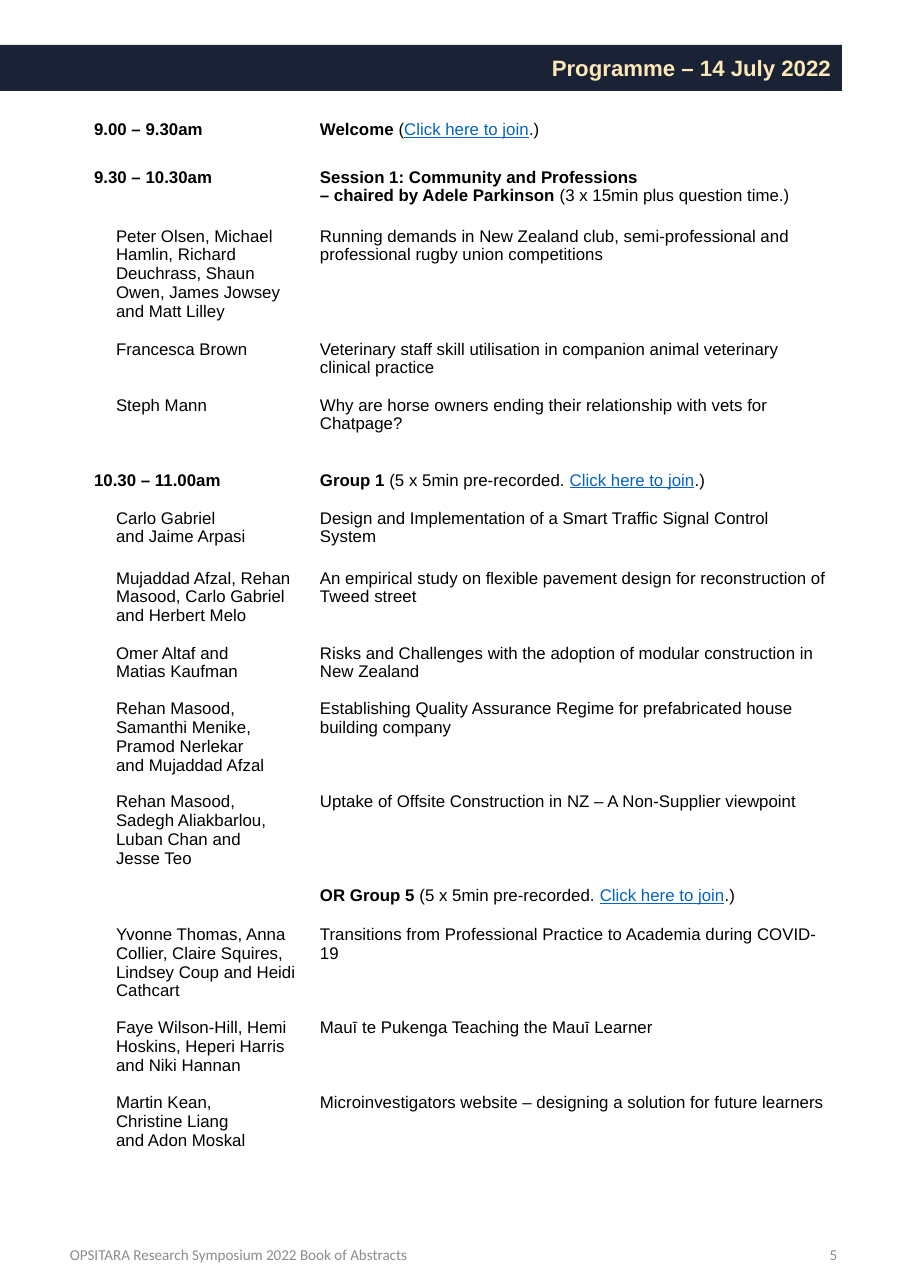
from lxml import etree
from pptx import Presentation
from pptx.dml.color import RGBColor
from pptx.enum.text import MSO_ANCHOR, PP_ALIGN
from pptx.oxml.ns import qn
from pptx.util import Pt

MIDDLE, RIGHT, LEFT = MSO_ANCHOR.MIDDLE, PP_ALIGN.RIGHT, PP_ALIGN.LEFT
PX = 8298
PAGE = (911, 1288)
PAD = 9
BODY = {"name": "Arial", "size": 11, "color": "000000"}
BOLD = {**BODY, "bold": True}
LINK = {**BODY, "color": "0563C1", "underline": True}
HEAD = {"name": "Arial", "size": 14.5, "color": "FEE8B6", "bold": True}
FOOT = {"name": "Calibri", "size": 9.9, "color": "8C8C8C"}

TITLE = "Programme – 14 July 2022"
FEET = [
    ("OPSITARA Research Symposium 2022 Book of Abstracts", 59, 380, LEFT),
    ("5", 643, 205, RIGHT),
]
JOIN = [("Click here to join", LINK), (".)", BODY)]
GROUP = [("(5 x 5min pre-recorded. ", BODY)] + JOIN
WELCOME = [[("Welcome ", BOLD), ("(", BODY)] + JOIN]
CHAIR = [
    [("Session 1: Community and Professions", BOLD)],
    [("– chaired by Adele Parkinson ", BOLD), ("(3 x 15min plus question time.)", BODY)],
]
ROWS = [
    (48, "9.00 – 9.30am", WELCOME),
    (59, "9.30 – 10.30am", CHAIR),
    (113, "Peter Olsen, Michael Hamlin, Richard Deuchrass, Shaun Owen, James Jowsey and Matt Lilley",
     "Running demands in New Zealand club, semi-professional and professional rugby union competitions"),
    (56, "Francesca Brown",
     "Veterinary staff skill utilisation in companion animal veterinary clinical practice"),
    (75, "Steph Mann",
     "Why are horse owners ending their relationship with vets for Chatpage?"),
    (38, "10.30 – 11.00am", [[("Group 1 ", BOLD)] + GROUP]),
    (60, "Carlo Gabriel\nand Jaime Arpasi",
     "Design and Implementation of a Smart Traffic Signal Control System"),
    (75, "Mujaddad Afzal, Rehan Masood, Carlo Gabriel and Herbert Melo",
     "An empirical study on flexible pavement design for reconstruction of Tweed street"),
    (56, "Omer Altaf and\nMatias Kaufman",
     "Risks and Challenges with the adoption of modular construction in New Zealand"),
    (93, "Rehan Masood, Samanthi Menike, Pramod Nerlekar\nand Mujaddad Afzal",
     "Establishing Quality Assurance Regime for prefabricated house building company"),
    (94, "Rehan Masood, Sadegh Aliakbarlou, Luban Chan and\nJesse Teo",
     "Uptake of Offsite Construction in NZ – A Non-Supplier viewpoint"),
    (38, "", [[("OR Group 5 ", BOLD)] + GROUP]),
    (93, "Yvonne Thomas, Anna Collier, Claire Squires, Lindsey Coup and Heidi Cathcart",
     "Transitions from Professional Practice to Academia during COVID- 19"),
    (75, "Faye Wilson-Hill, Hemi Hoskins, Heperi Harris and Niki Hannan",
     "Mauī te Pukenga Teaching the Mauī Learner"),
    (75, "Martin Kean,\nChristine Liang\nand Adon Moskal",
     "Microinvestigators website – designing a solution for future learners"),
]
WIDTHS = (237, 534)


def px(*nums):
    return [round(n * PX) for n in nums]


def paint(text):
    return RGBColor.from_string(text)


def style(font, look):
    for key, val in look.items():
        if key == "color":
            font.color.rgb = paint(val)
        else:
            setattr(font, key, Pt(val) if key == "size" else val)


def lines(text, look):
    return [[(line, look)] for line in text.split("\n")]


def write(frame, paras, side=LEFT, dent=0):
    frame.word_wrap = True
    for i, runs in enumerate(paras):
        para = frame.add_paragraph() if i else frame.paragraphs[0]
        para.alignment = side
        if dent:
            para._p.get_or_add_pPr().set("marL", str(px(dent)[0]))
        for text, look in runs:
            if text:
                run = para.add_run()
                run.text = text
                style(run.font, look)
            else:
                size = str(Pt(look["size"]).centipoints)
                etree.SubElement(para._p, qn("a:endParaRPr"), sz=size)


def inset(box, left, top, right, low):
    names = ("margin_left", "margin_top", "margin_right", "margin_bottom")
    for name, val in zip(names, px(left, top, right, low)):
        setattr(box, name, val)


def agenda(slide):
    spot = px(71, 111, sum(WIDTHS), sum(row[0] for row in ROWS))
    table = slide.shapes.add_table(len(ROWS), len(WIDTHS), *spot).table
    table.first_row = table.horz_banding = False
    for col, wide in zip(table.columns, px(*WIDTHS)):
        col.width = wide
    for i, (tall, who, what) in enumerate(ROWS):
        talk = isinstance(what, str)
        table.rows[i].height = px(tall)[0]
        left, right = table.cell(i, 0), table.cell(i, 1)
        for cell, edge in ((left, 23), (right, 12)):
            cell.fill.background()
            inset(cell, edge, PAD, 12, PAD)
        write(left.text_frame, lines(who, BODY if talk else BOLD), dent=22 if talk else 0)
        write(right.text_frame, lines(what, BODY) if talk else what)


def banner(slide):
    bar = slide.shapes.title
    bar.left, bar.top, bar.width, bar.height = px(0, 45, 842, 46)
    bar.fill.solid()
    bar.fill.fore_color.rgb = paint("1A2235")
    frame = bar.text_frame
    frame.vertical_anchor = MIDDLE
    inset(frame, 11, 0, 11, 0)
    write(frame, lines(TITLE, HEAD), RIGHT)


def footer(slide):
    for text, left, wide, side in FEET:
        frame = slide.shapes.add_textbox(*px(left, 1220, wide, 68)).text_frame
        frame.vertical_anchor = MIDDLE
        write(frame, lines(text, FOOT), side)


def main():
    """Build the programme page."""
    deck = Presentation()
    deck.slide_width, deck.slide_height = px(*PAGE)
    slide = deck.slides.add_slide(deck.slide_layouts[5])
    agenda(slide)
    banner(slide)
    footer(slide)
    deck.save("out.pptx")


if __name__ == "__main__":
    main()
